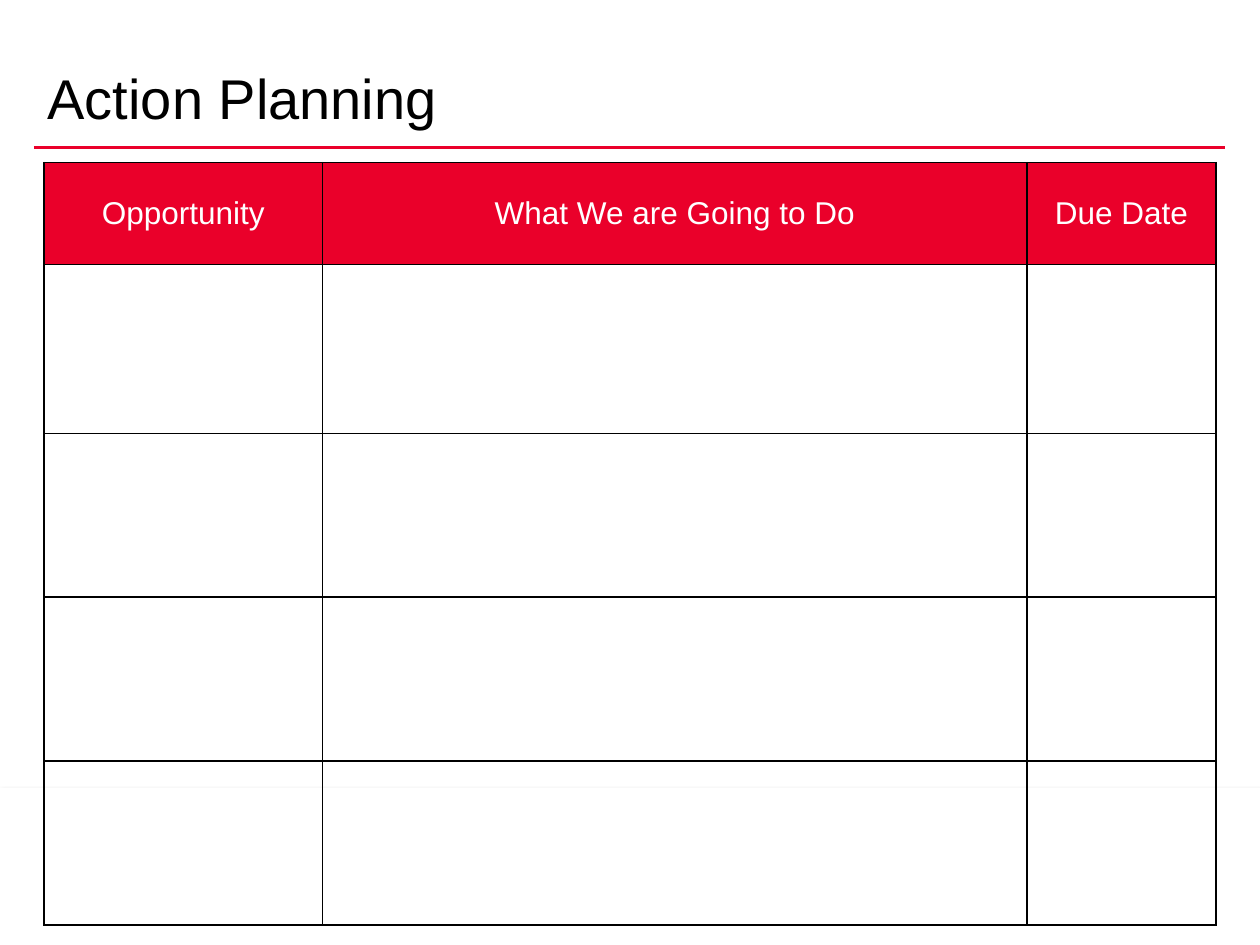
from dataclasses import dataclass

import pptx
import pptx.dml.color
import pptx.enum.shapes
import pptx.enum.text
import pptx.oxml
import pptx.oxml.ns
import pptx.util

# Grid of 100 columns by 75 rows
COLS, ROWS = 100, 75
CELL = pptx.util.Inches(0.1)
FONT = "Arial"
COLORS = {"red": "EA002A", "white": "FFFFFF", "black": "000000"}
NS = pptx.oxml.ns.nsdecls("a")


@dataclass
class Column:
    heading: str
    width: float


COLUMNS = [
    Column("Opportunity", 22.1),
    Column("What We are Going to Do", 55.9),
    Column("Due Date", 15),
]
ROW_HEIGHTS = [8.1, 13.4, 13, 13, 13]


def grid(n: float) -> int:
    return round(n * CELL)


def rgb(name: str) -> pptx.dml.color.RGBColor:
    return pptx.dml.color.RGBColor.from_string(COLORS[name])


def set_font(p, size: float, color: str) -> None:
    p.font.name = FONT
    p.font.size = pptx.util.Pt(size)
    p.font.color.rgb = rgb(color)


def add_footer(slide) -> None:
    sp = slide.shapes.add_shape(
        pptx.enum.shapes.MSO_SHAPE.RECTANGLE,
        0, grid(62.6), grid(COLS), grid(ROWS - 62.6))
    sp.fill.solid()
    sp.fill.fore_color.rgb = rgb("white")
    sp.line.color.rgb = rgb("white")
    sp.line.width = pptx.util.Pt(0.75)
    # Soft shadow below the band
    blur, dist = pptx.util.Pt(3.1), pptx.util.Pt(1.8)
    sp._element.spPr.append(pptx.oxml.parse_xml(
        f'<a:effectLst {NS}><a:outerShdw blurRad="{blur}" dist="{dist}" '
        f'dir="5400000" rotWithShape="0"><a:srgbClr val="{COLORS["black"]}">'
        '<a:alpha val="35000"/></a:srgbClr></a:outerShdw></a:effectLst>'))


def add_rule(slide) -> None:
    line = slide.shapes.add_connector(
        pptx.enum.shapes.MSO_CONNECTOR.STRAIGHT,
        grid(2.7), grid(11.7), grid(97.2), grid(11.7))
    line.line.color.rgb = rgb("red")
    line.line.width = pptx.util.Pt(2)
    line._element.spPr.append(pptx.oxml.parse_xml(f"<a:effectLst {NS}/>"))


def add_title(slide, text: str) -> None:
    tf = slide.shapes.add_textbox(
        grid(2.8), grid(0.5), grid(90), grid(10.3)).text_frame
    tf.word_wrap = True
    tf.vertical_anchor = pptx.enum.text.MSO_ANCHOR.BOTTOM
    p = tf.paragraphs[0]
    p.text = text
    p.line_spacing = 0.8
    set_font(p, 32, "black")


def set_borders(cell) -> None:
    tcPr = cell._tc.get_or_add_tcPr()
    for i, side in enumerate(("lnL", "lnR", "lnT", "lnB")):
        # Borders come before the fill
        tcPr.insert(i, pptx.oxml.parse_xml(
            f'<a:{side} {NS} w="{pptx.util.Pt(1)}"><a:solidFill>'
            f'<a:srgbClr val="{COLORS["black"]}"/></a:solidFill></a:{side}>'))


def add_plan(slide) -> None:
    table = slide.shapes.add_table(
        len(ROW_HEIGHTS), len(COLUMNS), grid(3.5), grid(12.9),
        grid(sum(c.width for c in COLUMNS)), grid(sum(ROW_HEIGHTS))).table
    table.first_row = table.horz_banding = False
    for row, height in zip(table.rows, ROW_HEIGHTS):
        row.height = grid(height)
    for i, column in enumerate(COLUMNS):
        table.columns[i].width = grid(column.width)
        # Heading cell
        head = table.cell(0, i)
        head.fill.solid()
        head.fill.fore_color.rgb = rgb("red")
        head.vertical_anchor = pptx.enum.text.MSO_ANCHOR.MIDDLE
        p = head.text_frame.paragraphs[0]
        p.text = column.heading
        p.alignment = pptx.enum.text.PP_ALIGN.CENTER
        set_font(p, 18, "white")
        # Blank cells to fill in
        for j in range(1, len(ROW_HEIGHTS)):
            table.cell(j, i).fill.background()
    for cell in table.iter_cells():
        set_borders(cell)


def main() -> None:
    prs = pptx.Presentation()
    prs.slide_width, prs.slide_height = grid(COLS), grid(ROWS)
    s = prs.slides.add_slide(prs.slide_layouts[6])
    add_footer(s)
    add_rule(s)
    add_title(s, "Action Planning")
    add_plan(s)
    prs.save("out.pptx")


if __name__ == "__main__":
    main()
